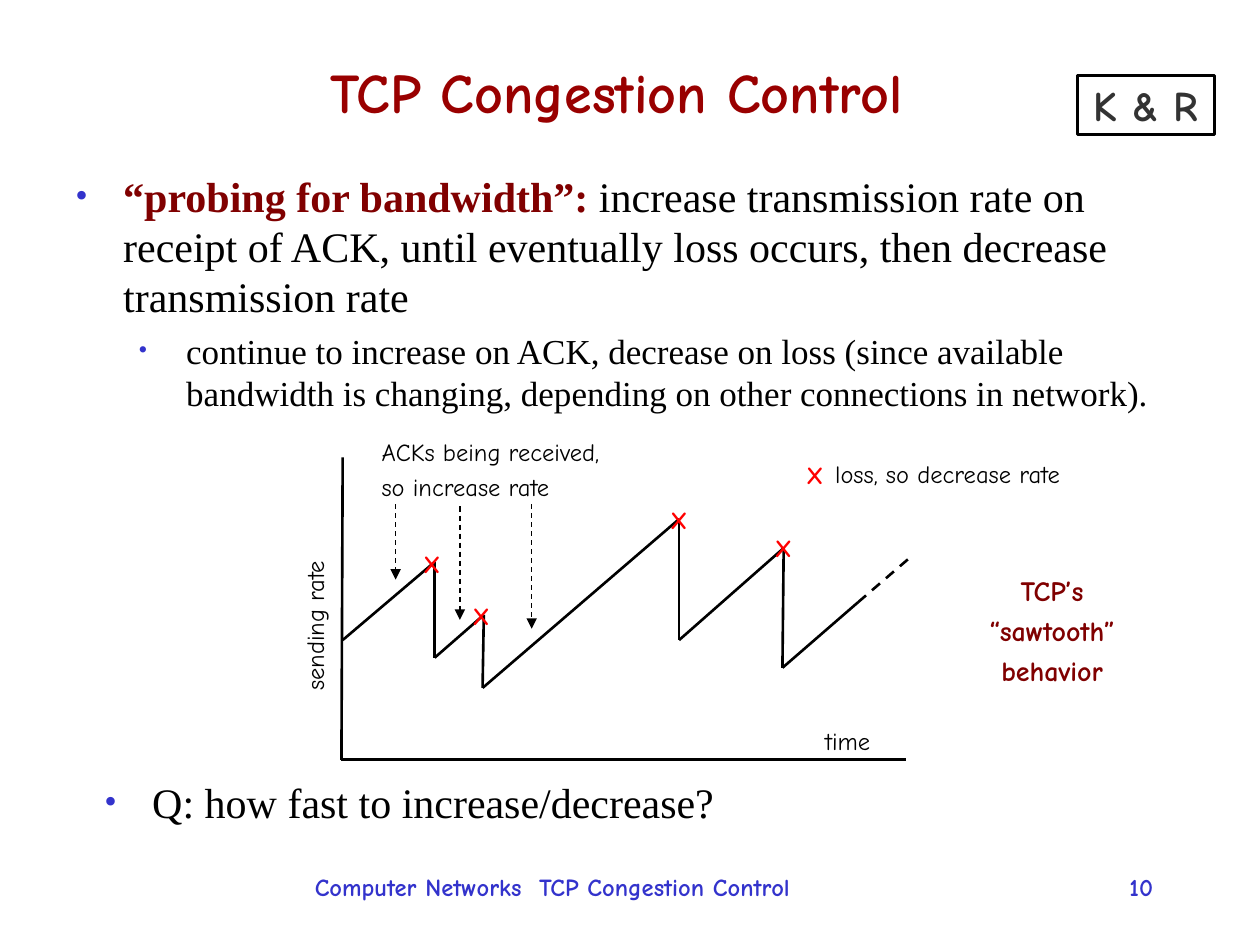
"""Build a slide on TCP congestion control with its sawtooth diagram."""
from itertools import pairwise

from lxml import etree
from pptx import Presentation
from pptx.dml.color import RGBColor
from pptx.enum import dml, shapes, text
from pptx.oxml import ns
from pptx.util import Inches, Pt

COLORS = {"title": "990000", "accent": "800000", "ink": "000000", "box": "333333",
          "loss": "FF0000", "blue": "3333CC"}
SERIF, COMIC = "Times New Roman", "Comic Neue"
LEFT, CENTER, RIGHT = text.PP_ALIGN.LEFT, text.PP_ALIGN.CENTER, text.PP_ALIGN.RIGHT


def color(name):
    return RGBColor.from_string(COLORS[name])


def add_child(parent, tag, **attributes):
    return etree.SubElement(parent, ns.qn(tag), attributes)


def write(paragraph, content, size=14, font=COMIC, ink="ink", bold=False):
    run = paragraph.add_run()
    run.text = content
    run.font.size, run.font.name, run.font.bold = Pt(size), font, bold
    run.font.color.rgb = color(ink)


class SlideBuilder:
    """Hold the current slide and draw elements in its style."""

    def __init__(self, slide):
        self.slide = slide

    def fill_frame(self, frame, lines, align=LEFT, wrap=False,
                   anchor=text.MSO_ANCHOR.TOP, **style):
        frame.word_wrap, frame.vertical_anchor = wrap, anchor
        for index, line in enumerate(lines):
            paragraph = frame.paragraphs[0] if index == 0 else frame.add_paragraph()
            paragraph.alignment = align
            if index:
                paragraph.space_before = Pt(style.get("size", 14) * 0.23)
            write(paragraph, line, **style)

    def label(self, box, *lines, parent=None, rotation=0, **style):
        holder = (parent or self.slide).shapes
        area = holder.add_textbox(*map(Inches, box))
        area.rotation = rotation
        self.fill_frame(area.text_frame, lines, **style)

    def bullets(self, box, *items):
        frame = self.slide.shapes.add_textbox(*map(Inches, box)).text_frame
        frame.word_wrap = True
        for index, (level, lead, body) in enumerate(items):
            paragraph = frame.paragraphs[0] if index == 0 else frame.add_paragraph()
            paragraph.level = level
            size = 24 - 4 * level
            if index:
                paragraph.space_before = Pt(size * 0.23)
            props = paragraph._p.get_or_add_pPr()
            props.set("marL", str(Inches(0.38 + 0.5 * level)))
            props.set("indent", str(Inches(-0.38)))
            add_child(add_child(props, "a:buClr"), "a:srgbClr", val=COLORS["blue"])
            add_child(props, "a:buSzPct", val=str(85000 - 10000 * level))
            add_child(props, "a:buFont", typeface=SERIF)
            add_child(props, "a:buChar", char="•")
            if lead:
                write(paragraph, lead, size, SERIF, "accent", True)
            write(paragraph, body, size, SERIF)

    def line(self, start, end, width=1.5, dashed=False, arrow=False):
        connector = self.slide.shapes.add_connector(
            shapes.MSO_CONNECTOR.STRAIGHT, *map(Inches, (*start, *end)))
        connector.line.color.rgb = color("ink")
        connector.line.width = Pt(width)
        if dashed:
            connector.line.dash_style = dml.MSO_LINE.DASH
        if arrow:
            add_child(connector.line._get_or_add_ln(), "a:tailEnd", type="triangle")
        add_child(connector._element.spPr, "a:effectLst")

    def loss(self, left, top, parent=None):
        self.label((left, top, 0.34, 0.33), "X", parent=parent,
                   align=CENTER, ink="loss", bold=True)

    def frame_box(self, box, *lines, **style):
        rect = self.slide.shapes.add_shape(shapes.MSO_SHAPE.RECTANGLE, *map(Inches, box))
        rect.shadow.inherit = False
        rect.fill.background()
        rect.line.color.rgb = color("ink")
        rect.line.width = Pt(2)
        self.fill_frame(rect.text_frame, lines, anchor=text.MSO_ANCHOR.MIDDLE, **style)


def draw_diagram(builder):
    origin = (2.71, 6.03)
    builder.line((2.72, 3.63), origin)
    builder.line(origin, (7.19, 6.03))

    sawtooth = [(2.72, 5.08), (3.45, 4.46), (3.45, 5.22), (3.84, 4.88), (3.83, 5.46),
                (5.39, 4.12), (5.39, 5.08), (6.22, 4.35), (6.21, 5.3), (6.81, 4.78)]
    for start, end in pairwise(sawtooth):
        builder.line(start, end)
    builder.line(sawtooth[-1], (7.24, 4.41), dashed=True)

    builder.label((2.93, 3.42, 2.15, 0.57), "ACKs being received,", "so increase rate")
    for x, top, bottom in [(3.14, 4, 4.6), (3.65, 4.02, 4.92), (4.22, 4, 4.99)]:
        builder.line((x, top), (x, bottom), width=0.75, dashed=True, arrow=True)

    for left, top in [(3.26, 4.31), (3.65, 4.72), (5.22, 3.96), (6.05, 4.18)]:
        builder.loss(left, top)
    legend = builder.slide.shapes.add_group_shape()
    builder.loss(6.3, 3.6, parent=legend)
    builder.label((6.53, 3.59, 2.18, 0.33), "loss, so decrease rate", parent=legend)

    builder.label((1.83, 4.75, 1.33, 0.33), "sending rate", rotation=270)
    builder.label((6.45, 5.71, 0.6, 0.33), "time")
    builder.label((7.67, 4.5, 1.36, 1.02), "TCP’s", "“sawtooth”", "behavior",
                  align=CENTER, size=16, ink="accent", bold=True)


def main():
    deck = Presentation()
    deck.slide_width, deck.slide_height = Inches(10), Inches(7.5)
    builder = SlideBuilder(deck.slides.add_slide(deck.slide_layouts[6]))

    builder.label((0.27, 0.14, 9.25, 1.17), "TCP Congestion Control", align=CENTER, wrap=True,
                  anchor=text.MSO_ANCHOR.MIDDLE, size=32, ink="title", bold=True)
    builder.bullets(
        (0.5, 1.3, 9, 1.58),
        (0, "“probing for bandwidth”: ",
         "increase transmission rate on receipt of ACK, until eventually loss occurs, "
         "then decrease transmission rate"),
        (1, "", "continue to increase on ACK, decrease on loss (since available bandwidth "
                "is changing, depending on other connections in network)."))
    draw_diagram(builder)
    builder.bullets((0.73, 6.11, 9, 0.63), (0, "", "Q: how fast to increase/decrease?"))
    builder.frame_box((8.55, 0.6, 1.09, 0.47), "K & R",
                      align=CENTER, size=24, ink="box", bold=True)

    footer = {"wrap": True, "ink": "blue", "bold": True}
    builder.label((2.4, 6.87, 5.43, 0.42), "Computer Networks  TCP Congestion Control", **footer)
    builder.label((7.75, 6.87, 1.5, 0.5), "10", align=RIGHT, **footer)
    deck.save("out.pptx")


if __name__ == "__main__":
    main()
